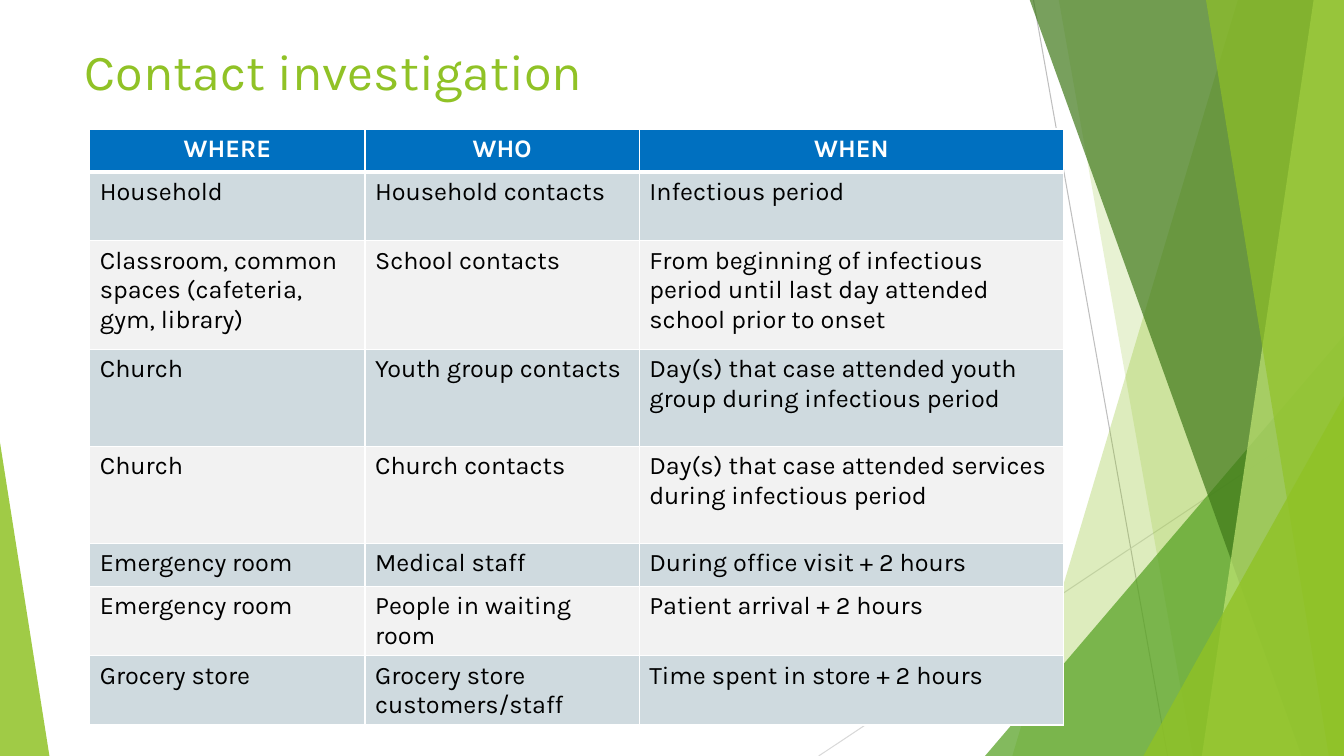
"""Build the contact investigation slide: a where/who/when table on a faceted green backdrop."""
from dataclasses import dataclass

import lxml.etree
import pptx
import pptx.dml.color
import pptx.enum.shapes
import pptx.enum.text
import pptx.oxml
import pptx.oxml.ns
import pptx.util

Inches, Pt = pptx.util.Inches, pptx.util.Pt
qn = pptx.oxml.ns.qn


@dataclass(frozen=True)
class Theme:
    font: str = "Karla"
    title_size: int = 36
    cell_size: int = 18
    green: str = "90C226"
    mid_green: str = "54A021"
    dark_green: str = "3F7819"
    pale_green: str = "C0E474"
    white: str = "FFFFFF"
    black: str = "000000"
    header: str = "0070C0"
    bands: tuple = ("CFDADF", "F2F2F2")


THEME = Theme()
WIDTH, HEIGHT, BLEED = 13.33, 7.5, -0.01

TITLE = "Contact investigation"
HEADERS = ("WHERE", "WHO", "WHEN")
CONTACTS = [
    ("Household", "Household contacts", "Infectious period"),
    ("Classroom, common spaces (cafeteria, gym, library)", "School contacts",
     "From beginning of infectious period until last day attended school prior to onset"),
    ("Church", "Youth group contacts",
     "Day(s) that case attended youth group during infectious period"),
    ("Church", "Church contacts", "Day(s) that case attended services during infectious period"),
    ("Emergency room", "Medical staff", "During office visit + 2 hours"),
    ("Emergency room", "People in waiting room", "Patient arrival + 2 hours"),
    ("Grocery store", "Grocery store customers/staff", "Time spent in store + 2 hours"),
]
COLUMN_WIDTHS = (2.73, 2.72, 4.21)
ROW_HEIGHTS = (0.43, 0.68, 1.08, 0.96, 0.96, 0.43, 0.67, 0.67)

HAIRLINES = [
    ((10.25, 0), (11.58, HEIGHT), "BFBFBF"),
    ((WIDTH, 4.03), (8.12, HEIGHT), "D9D9D9"),
]
# band: top-left x, bottom-left x; triangle: left, width, height, apex
FACETS = [
    ("band", (12.28, 10.04), THEME.green, 30),
    ("band", (10.5, 11.83), THEME.green, 20),
    ("triangle", (9.77, 3.56, 4.17, 1), THEME.mid_green, 72),
    ("band", (10.21, 12.91), THEME.dark_green, 70),
    ("band", (13.03, 11.92), THEME.pale_green, 70),
    ("band", (11.96, 13.18), THEME.green, 65),
    ("triangle", (11.34, 1.99, 3.57, 1), THEME.green, 80),
    ("triangle", (0, 0.49, 3.11, 0), THEME.green, 85),
]


def rgb(value):
    return pptx.dml.color.RGBColor.from_string(value)


def add_hairline(s, start, end, color):
    line = s.shapes.add_connector(pptx.enum.shapes.MSO_CONNECTOR.STRAIGHT,
                                  *map(Inches, start + end))
    line.line.color.rgb = rgb(color)
    line.line.width = Pt(0.75)
    lxml.etree.SubElement(line._element.spPr, qn("a:effectLst"))


def add_facet(s, kind, geometry, color, opacity):
    if kind == "band":
        top_x, bottom_x = geometry
        corners = [(WIDTH, BLEED), (WIDTH, HEIGHT), (bottom_x, HEIGHT)]
        outline = s.shapes.build_freeform(Inches(top_x), Inches(BLEED))
        outline.add_line_segments([(Inches(x), Inches(y)) for x, y in corners], close=True)
        sp = outline.convert_to_shape()
    else:
        left, width, height, apex = geometry
        sp = s.shapes.add_shape(pptx.enum.shapes.MSO_SHAPE.ISOSCELES_TRIANGLE, Inches(left),
                                Inches(HEIGHT - height), Inches(width), Inches(height))
        sp.adjustments[0] = apex
    sp.shadow.inherit = False
    sp.line.fill.background()
    sp.fill.solid()
    sp.fill.fore_color.rgb = rgb(color)
    tint = sp._element.spPr.find(qn("a:solidFill"))[0]
    lxml.etree.SubElement(tint, qn("a:alpha"), val=str(opacity * 1000))


def write(p, text, size, color, bold=False):
    r = p.add_run()
    r.text = text
    r.font.name = THEME.font
    r.font.size = Pt(size)
    r.font.bold = bold
    r.font.color.rgb = rgb(color)


def add_title(s):
    title = s.shapes.title
    s.shapes._spTree.append(title._element)
    title.left, title.top, title.width, title.height = map(Inches, (0.74, 0.3, 9.4, 0.99))
    tf = title.text_frame
    tf.vertical_anchor = pptx.enum.text.MSO_ANCHOR.TOP
    tf.margin_top = Inches(0.1)
    p = tf.paragraphs[0]
    p.alignment = pptx.enum.text.PP_ALIGN.LEFT
    write(p, TITLE, THEME.title_size, THEME.green)


def format_cell(cell, text, is_header, fill):
    tcPr = cell._tc.get_or_add_tcPr()
    for side in "LRTB":
        width = 3 if is_header and side == "B" else 1
        ln = lxml.etree.SubElement(tcPr, qn(f"a:ln{side}"), w=str(Pt(width)))
        solid = lxml.etree.SubElement(ln, qn("a:solidFill"))
        lxml.etree.SubElement(solid, qn("a:srgbClr"), val=THEME.white)
    cell.fill.solid()
    cell.fill.fore_color.rgb = rgb(fill)
    p = cell.text_frame.paragraphs[0]
    align = pptx.enum.text.PP_ALIGN
    p.alignment = align.CENTER if is_header else align.LEFT
    write(p, text, THEME.cell_size, THEME.white if is_header else THEME.black, is_header)


def add_contact_table(s):
    rows = [HEADERS, *CONTACTS]
    table = s.shapes.add_table(len(rows), len(HEADERS), Inches(0.89), Inches(1.28),
                               Inches(sum(COLUMN_WIDTHS)), Inches(sum(ROW_HEIGHTS))).table
    for column, width in zip(table.columns, COLUMN_WIDTHS):
        column.width = Inches(width)
    for i, (row, height, texts) in enumerate(zip(table.rows, ROW_HEIGHTS, rows)):
        row.height = Inches(height)
        fill = THEME.bands[(i - 1) % 2] if i else THEME.header
        for cell, text in zip(row.cells, texts):
            format_cell(cell, text, i == 0, fill)


def main():
    prs = pptx.Presentation()
    prs.slide_width, prs.slide_height = Inches(WIDTH), Inches(HEIGHT)
    s = prs.slides.add_slide(prs.slide_layouts.get_by_name("Title Only"))
    for hairline in HAIRLINES:
        add_hairline(s, *hairline)
    for facet in FACETS:
        add_facet(s, *facet)
    add_title(s)
    add_contact_table(s)
    prs.save("out.pptx")


if __name__ == "__main__":
    main()
